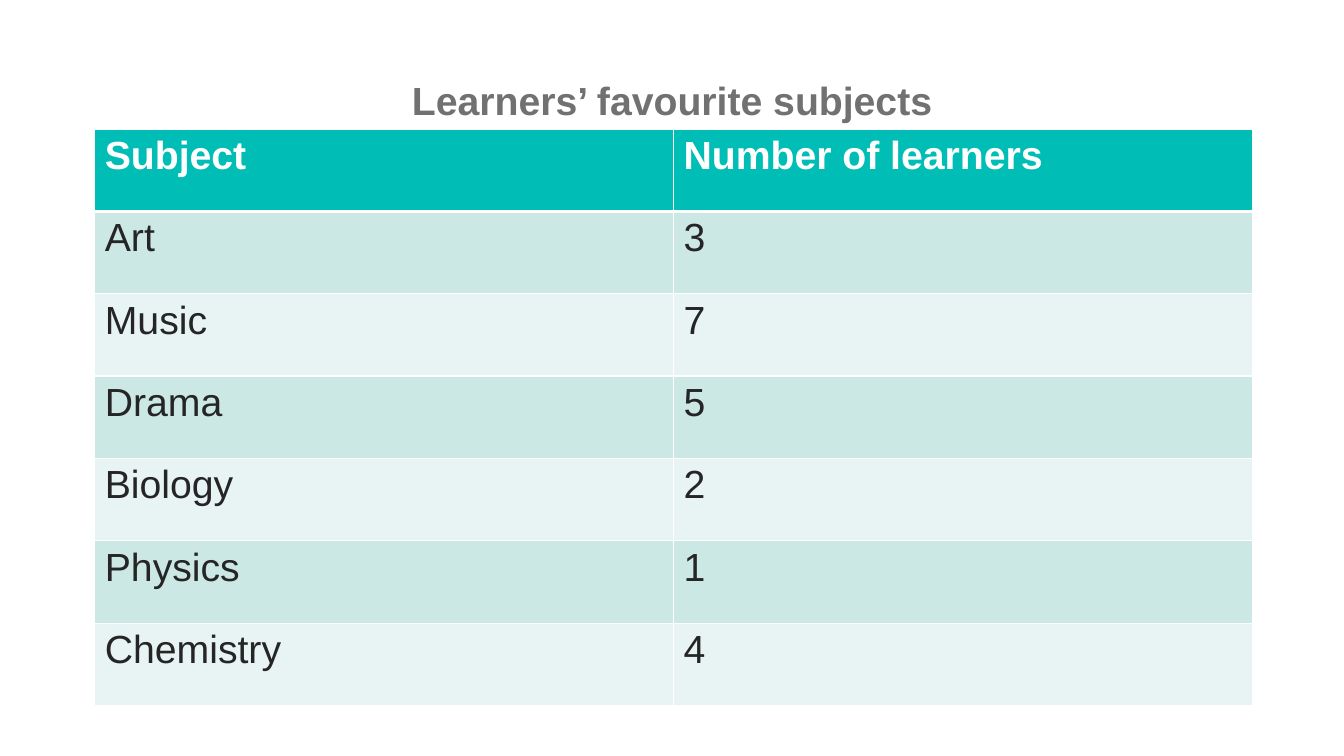
from dataclasses import dataclass

from lxml import etree
from pptx import Presentation
from pptx.dml.color import RGBColor
from pptx.enum.text import MSO_ANCHOR, PP_ALIGN
from pptx.oxml.ns import qn
from pptx.util import Inches, Pt

CENTER = PP_ALIGN.CENTER
MIDDLE = MSO_ANCHOR.MIDDLE
TITLE_ONLY_LAYOUT = 5
FONT_NAME = "Arial"
FONT_SIZE = Pt(28)
COLORS = {
    "title": "717171",
    "header": "00BDB6",
    "odd_row": "CCE8E5",
    "even_row": "E7F4F3",
    "body": "252525",
    "white": "FFFFFF",
}
THIN, THICK = Pt(1), Pt(3)


@dataclass(frozen=True)
class SubjectCount:
    subject: str
    learners: str


HEADER = SubjectCount("Subject", "Number of learners")
FAVOURITES = [
    SubjectCount("Art", "3"),
    SubjectCount("Music", "7"),
    SubjectCount("Drama", "5"),
    SubjectCount("Biology", "2"),
    SubjectCount("Physics", "1"),
    SubjectCount("Chemistry", "4"),
]


def format_text(paragraph, color: str, bold: bool) -> None:
    for run in paragraph.runs:
        run.font.name = FONT_NAME
        run.font.size = FONT_SIZE
        run.font.bold = bold
        run.font.color.rgb = RGBColor.from_string(COLORS[color])


def add_borders(cell, top: int, bottom: int) -> None:
    """Draw white cell borders; must run before the cell fill is set."""
    properties = cell._tc.get_or_add_tcPr()
    widths = {"a:lnL": THIN, "a:lnR": THIN, "a:lnT": top, "a:lnB": bottom}
    for tag, width in widths.items():
        line = etree.SubElement(properties, qn(tag), w=str(width))
        fill = etree.SubElement(line, qn("a:solidFill"))
        etree.SubElement(fill, qn("a:srgbClr"), val=COLORS["white"])


def add_title(slide, text: str) -> None:
    title = slide.shapes.title
    title.left, title.top = Inches(3.33), Inches(0.71)
    title.width, title.height = Inches(6.67), Inches(0.57)
    frame = title.text_frame
    frame.text = text
    frame.word_wrap = True
    frame.vertical_anchor = MIDDLE
    paragraph = frame.paragraphs[0]
    paragraph.alignment = CENTER
    format_text(paragraph, "title", bold=True)


def add_subject_table(slide, entries: list[SubjectCount]) -> None:
    table = slide.shapes.add_table(
        len(entries), 2, Inches(0.94), Inches(1.28), Inches(11.48), Inches(5.72)
    ).table
    for row, entry in enumerate(entries):
        is_header = row == 0
        row_fill = "header" if is_header else "odd_row" if row % 2 else "even_row"
        for column, text in enumerate((entry.subject, entry.learners)):
            cell = table.cell(row, column)
            add_borders(
                cell,
                top=THICK if row == 1 else THIN,
                bottom=THICK if is_header else THIN,
            )
            cell.fill.solid()
            cell.fill.fore_color.rgb = RGBColor.from_string(COLORS[row_fill])
            cell.text_frame.text = text
            format_text(
                cell.text_frame.paragraphs[0],
                "white" if is_header else "body",
                bold=is_header,
            )


def main() -> None:
    presentation = Presentation()
    presentation.slide_width = Inches(13.33)
    presentation.slide_height = Inches(7.5)
    slide = presentation.slides.add_slide(
        presentation.slide_layouts[TITLE_ONLY_LAYOUT]
    )
    add_title(slide, "Learners’ favourite subjects")
    add_subject_table(slide, [HEADER, *FAVOURITES])
    presentation.save("out.pptx")


if __name__ == "__main__":
    main()
